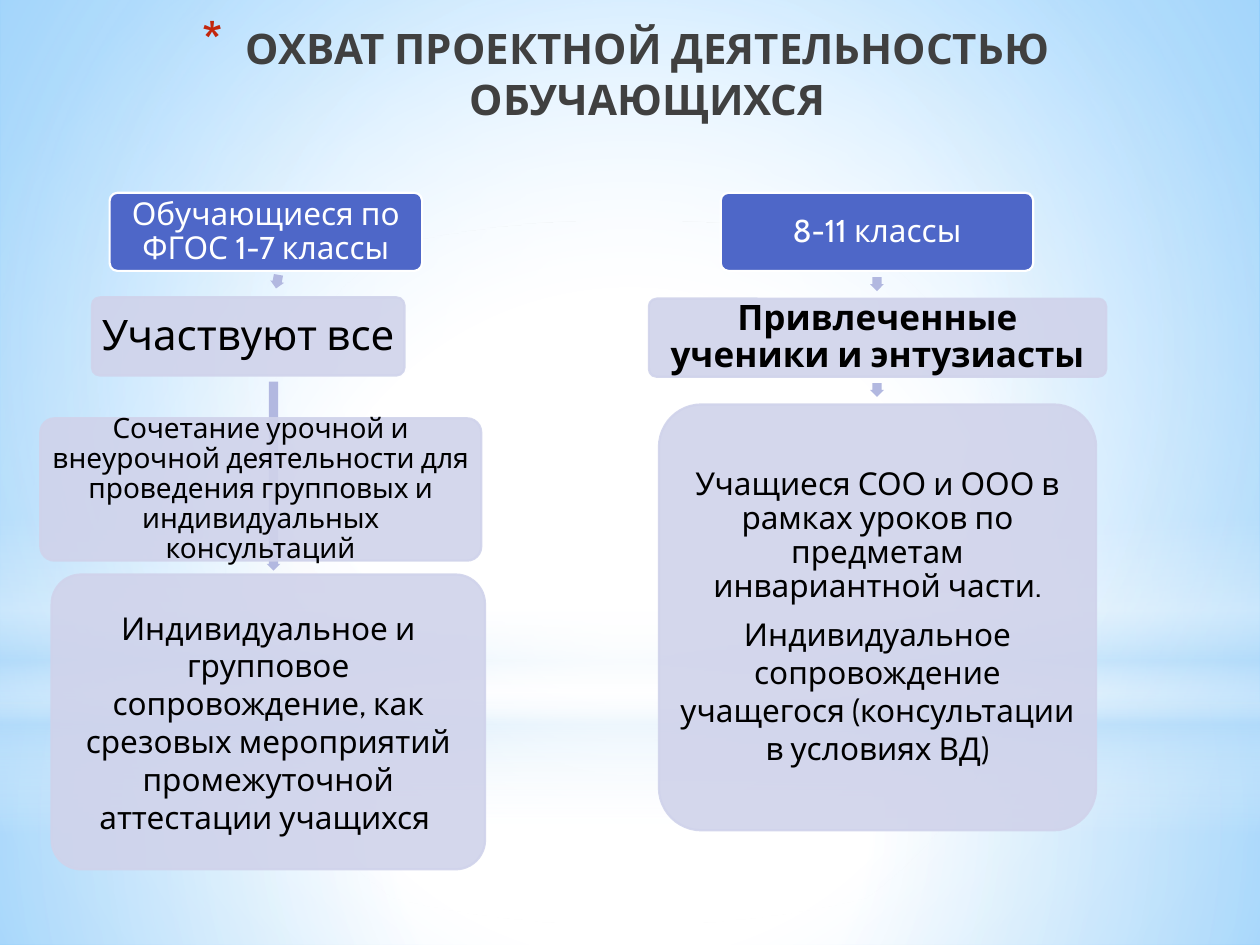
from lxml import etree
from pptx import Presentation
from pptx.dml.color import RGBColor
from pptx.enum.shapes import MSO_SHAPE
from pptx.enum.text import MSO_ANCHOR, PP_ALIGN
from pptx.oxml import parse_xml
from pptx.oxml.ns import nsdecls, qn
from pptx.util import Inches, Pt

RECTANGLE, OVAL = MSO_SHAPE.RECTANGLE, MSO_SHAPE.OVAL
ROUNDED, ARROW = MSO_SHAPE.ROUNDED_RECTANGLE, MSO_SHAPE.RIGHT_ARROW
CENTER, TOP, MIDDLE = PP_ALIGN.CENTER, MSO_ANCHOR.TOP, MSO_ANCHOR.MIDDLE

COLORS = {
    "white": "FFFFFF", "black": "000000", "title": "404040", "bullet": "C3260C",
    "header": "4E67C8", "panel": "D0D3EB", "arrow": "B2B8E0",
    "sky": "63BCFF", "pale": "B4DCFA",
}


class SlideBuilder:
    """Holds the style and the current slide."""

    font = "Cabin"
    inset = Inches(0.03)

    def __init__(self, page):
        self.page = page

    def color(self, name):
        return RGBColor.from_string(COLORS[name])

    def set_gradient(self, parent, stops, direction):
        """Replace the gradient in parent; each stop is (position, color, opacity)."""
        stop_xml = "".join(
            f'<a:gs pos="{position * 1000}"><a:srgbClr val="{COLORS[name]}">'
            f'<a:alpha val="{opacity * 1000}"/></a:srgbClr></a:gs>'
            for position, name, opacity in stops)
        old = parent.find(".//" + qn("a:gradFill"))
        old.getparent().replace(old, parse_xml(
            f'<a:gradFill {nsdecls("a")} rotWithShape="1">'
            f"<a:gsLst>{stop_xml}</a:gsLst>{direction}</a:gradFill>"))

    def circle(self, left, top, right, bottom):
        return (f'<a:path path="circle"><a:fillToRect l="{left}000" t="{top}000" '
                f'r="{right}000" b="{bottom}000"/></a:path>')

    def background(self, stops, direction):
        self.page.background.fill.gradient()
        self.set_gradient(self.page.element, stops, direction)

    def shape(self, kind, place):
        shape = self.page.shapes.add_shape(kind, *map(Inches, place))
        shape.shadow.inherit = False
        shape.line.fill.background()
        return shape

    def glow(self, kind, place, stops, direction):
        shape = self.shape(kind, place)
        shape.fill.gradient()
        self.set_gradient(shape.element.spPr, stops, direction)

    def add_span(self, para, text, size, color, bold=False):
        para.alignment = CENTER
        span = para.add_run()
        span.text = text
        span.font.name = self.font
        span.font.size = Pt(size)
        span.font.bold = bold
        span.font.color.rgb = self.color(color)

    def title(self, place, text):
        title = self.page.shapes.title
        title.left, title.top, title.width, title.height = map(Inches, place)
        title.element.getparent().append(title.element)  # in front of the glows
        title.text_frame.vertical_anchor = TOP
        para = title.text_frame.paragraphs[0]
        self.add_span(para, text, 24, "title", True)
        properties = para._p.get_or_add_pPr()
        properties.set("marL", str(Inches(0.35)))
        properties.set("indent", str(-Inches(0.35)))
        color = etree.SubElement(properties, qn("a:buClr"))
        etree.SubElement(color, qn("a:srgbClr"), val=COLORS["bullet"])
        etree.SubElement(properties, qn("a:buSzPct"), val="128000")
        etree.SubElement(properties, qn("a:buChar"), char="*")

    def box(self, place, paragraphs, size, header=False, bold=False):
        """Rounded box; each paragraph is (text, line spacing)."""
        box = self.shape(ROUNDED, place)
        box.adjustments[0] = 0.1
        box.fill.solid()
        box.fill.fore_color.rgb = self.color("header" if header else "panel")
        box.line.color.rgb = self.color("white" if header else "panel")
        box.line.width = Pt(1.25)
        if not header:
            for color in box.element.spPr.iter(qn("a:srgbClr")):
                etree.SubElement(color, qn("a:alpha"), val="90000")
        frame = box.text_frame
        frame.word_wrap = True
        frame.vertical_anchor = MIDDLE
        frame.margin_left = frame.margin_right = self.inset
        frame.margin_top = frame.margin_bottom = self.inset
        for index, (text, spacing) in enumerate(paragraphs):
            para = frame.add_paragraph() if index else frame.paragraphs[0]
            para.line_spacing = spacing
            para.space_after = Pt(0.35 * size)
            self.add_span(para, text, size, "white" if header else "black", bold)

    def down_arrow(self, center, top, length=0.11, rotation=90):
        thickness = 0.11
        arrow = self.shape(ARROW, (center - length / 2, top + (length - thickness) / 2,
                                   length, thickness))
        arrow.rotation = rotation
        arrow.adjustments[0], arrow.adjustments[1] = 0.67, 0.5
        arrow.fill.solid()
        arrow.fill.fore_color.rgb = self.color("arrow")


def add_backdrop(builder):
    middle = builder.circle(50, 50, 50, 50)
    builder.background([(0, "white", 100), (42, "white", 100), (100, "sky", 100)],
                       builder.circle(24, 44, 24, 12))
    builder.glow(RECTANGLE, (0, 5.58, 10, 1.92),
                 [(0, "white", 91), (37, "white", 76), (100, "pale", 79)], middle)
    builder.glow(RECTANGLE, (0, 0, 10, 5.58),
                 [(0, "white", 89), (48, "white", 62), (100, "pale", 79)], middle)
    builder.glow(RECTANGLE, (0, 4.12, 10, 2.5),
                 [(0, "white", 0), (29, "white", 30), (45, "pale", 40),
                  (55, "white", 26), (65, "pale", 60), (100, "white", 0)],
                 '<a:lin ang="5400000" scaled="0"/>')
    builder.glow(OVAL, (0, 1.75, 10, 5.58),
                 [(0, "white", 100), (56, "white", 0)], middle)


def add_left_column(builder):
    builder.box((0.87, 1.53, 2.48, 0.62), [("Обучающиеся по ФГОС 1-7 классы", 0.9)],
                18, header=True)
    builder.down_arrow(2.2, 2.18, rotation=100)
    builder.box((0.73, 2.36, 2.48, 0.62), [("Участвуют все", 0.9)], 24)
    builder.down_arrow(2.17, 3.03, length=1.5)
    builder.box((0.41, 4.56, 3.44, 2.34), [
        ("Индивидуальное и групповое сопровождение, как срезовых мероприятий "
         "промежуточной аттестации учащихся ", 1.0)], 18)
    builder.box((0.32, 3.32, 3.5, 1.13), [
        ("Сочетание урочной и внеурочной деятельности для проведения групповых "
         "и индивидуальных консультаций", 0.9)], 16)


def add_right_column(builder):
    center = 6.96
    builder.box((5.72, 1.53, 2.48, 0.62), [("8-11 классы", 0.9)], 18, header=True)
    builder.down_arrow(center, 2.2)
    builder.box((5.15, 2.37, 3.63, 0.62), [("Привлеченные ученики и энтузиасты", 0.9)],
                20, bold=True)
    builder.down_arrow(center, 3.04)
    builder.box((5.23, 3.21, 3.47, 3.38), [
        ("Учащиеся СОО и ООО в рамках уроков по предметам инвариантной части.", 0.9),
        ("Индивидуальное сопровождение учащегося (консультации в условиях ВД)", 1.0)],
        18)


def main():
    deck = Presentation()
    deck.slide_width, deck.slide_height = Inches(10), Inches(7.5)
    builder = SlideBuilder(deck.slides.add_slide(deck.slide_layouts[5]))
    add_backdrop(builder)
    builder.title((0.2, 0.13, 9.53, 0.87), "ОХВАТ ПРОЕКТНОЙ ДЕЯТЕЛЬНОСТЬЮ ОБУЧАЮЩИХСЯ")
    add_left_column(builder)
    add_right_column(builder)
    deck.save("out.pptx")


if __name__ == "__main__":
    main()
